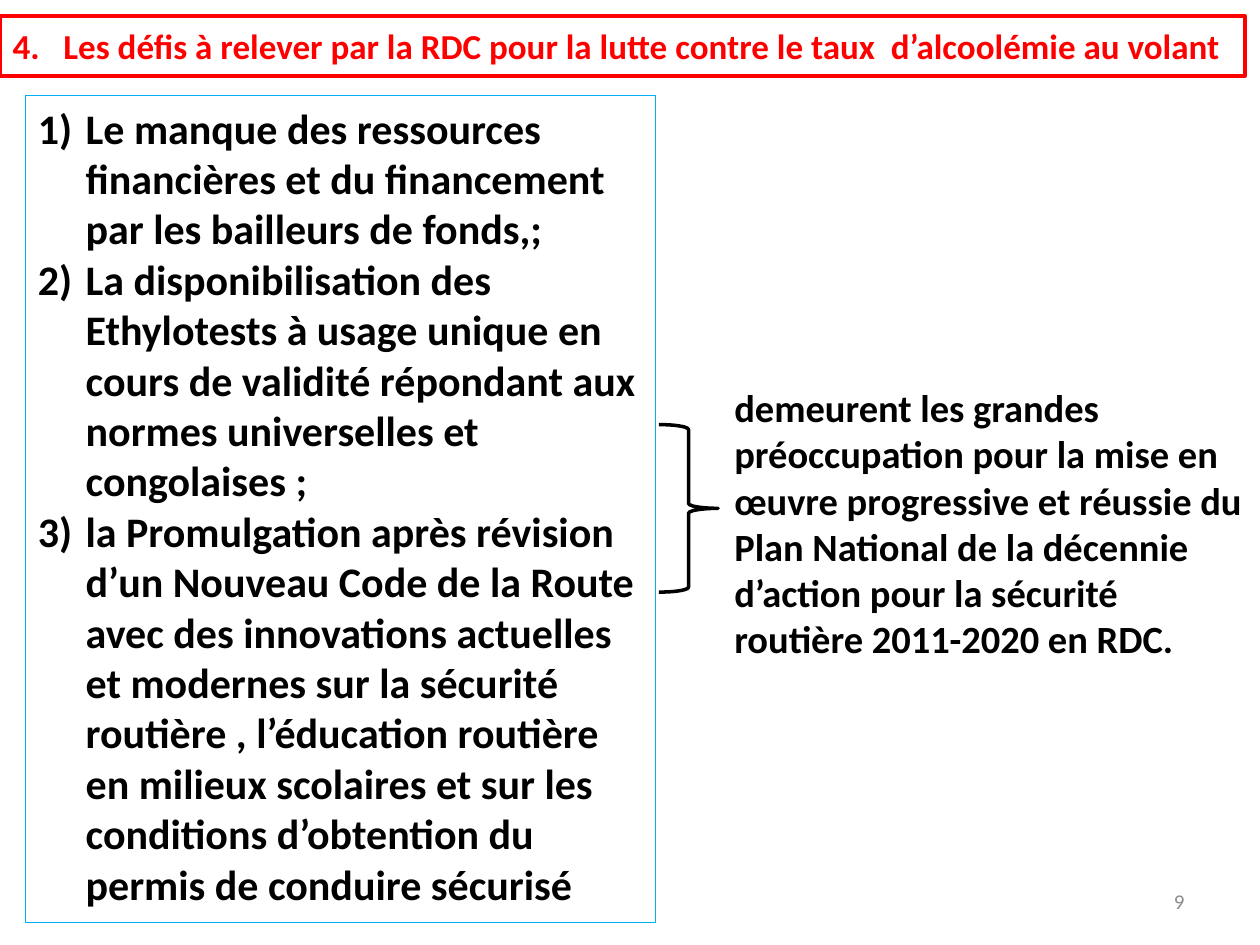
"""Build the slide on the challenges of drink-driving control in the DRC."""
from lxml import etree
from pptx import Presentation
from pptx import util as u
from pptx.dml.color import RGBColor
from pptx.enum import shapes, text

HUES = {"red": "FF0000", "blue": "00B0F0", "black": "000000", "grey": "8C8C8C"}
TITLE = "4.   Les défis à relever par la RDC pour la lutte contre le taux  d’alcoolémie au volant"
ITEMS = [
    "Le manque des ressources financières et du financement par les bailleurs de fonds,;",
    "La disponibilisation des Ethylotests à usage unique en  cours de validité "
    "répondant aux normes universelles et congolaises ;",
    "la Promulgation après révision d’un Nouveau Code de la Route avec des innovations "
    "actuelles et modernes sur la sécurité routière , l’éducation routière en milieux "
    "scolaires et sur les conditions d’obtention du permis de conduire sécurisé",
]
RESULT = (
    "demeurent les grandes préoccupation pour la mise en œuvre progressive et réussie du "
    "Plan National de la décennie  d’action pour la sécurité routière 2011-2020 en RDC."
)
PAGE = "9"
SPOTS = {
    "title": (0, 0.13, 9.88, 0.47),
    "list": (0.2, 0.76, 5, 6.56),
    "result": (5.73, 3, 4.33, 2.32),
    "brace": (5.23, 3.37, 0.47, 1.33),
    "page": (7.17, 6.95, 2.33, 0.4),
}
ALIGN = text.PP_ALIGN


def tint(name):
    return RGBColor.from_string(HUES[name])


def place(shape, spot):
    shape.left, shape.top, shape.width, shape.height = map(u.Inches, SPOTS[spot])


def edge(shape, hue, width):
    shape.line.color.rgb = tint(hue)
    shape.line.width = u.Pt(width)


def write(shape, lines, size, hue, bold=True, align=ALIGN.LEFT, anchor=text.MSO_ANCHOR.TOP):
    frame = shape.text_frame
    frame.word_wrap = True
    frame.auto_size = text.MSO_AUTO_SIZE.NONE
    frame.vertical_anchor = anchor
    for num, line in enumerate(lines):
        para = frame.add_paragraph() if num else frame.paragraphs[0]
        para.alignment = align
        para.space_before = u.Pt(0)
        run = para.add_run()
        run.text = line
        font = run.font
        font.name, font.size, font.bold = "Calibri", u.Pt(size), bold
        font.color.rgb = tint(hue)
    return frame.paragraphs


def number(para):
    props = para._p.get_or_add_pPr()
    props.set("marL", str(u.Inches(0.38)))
    props.set("indent", str(-u.Inches(0.38)))
    space = props.nsmap["a"]
    etree.SubElement(props, f"{{{space}}}buFont", typeface="+mj-lt")
    etree.SubElement(props, f"{{{space}}}buAutoNum", type="arabicParenR")


def main():
    deck = Presentation()
    deck.slide_width, deck.slide_height = u.Inches(10), u.Inches(7.5)
    slide = deck.slides.add_slide(deck.slide_layouts[1])
    middle = text.MSO_ANCHOR.MIDDLE

    title = slide.shapes.title
    place(title, "title")
    edge(title, "red", 2.25)
    write(title, [TITLE], 20, "red", anchor=middle)

    body = slide.placeholders[1]
    place(body, "list")
    edge(body, "blue", 0.75)
    for para in write(body, ITEMS, 24, "black"):
        number(para)

    result = slide.shapes.add_textbox(0, 0, 0, 0)
    place(result, "result")
    write(result, [RESULT], 22, "black")

    brace = slide.shapes.add_shape(shapes.MSO_SHAPE.RIGHT_BRACE, 0, 0, 0, 0)
    place(brace, "brace")
    brace.shadow.inherit = False
    brace.fill.background()
    edge(brace, "black", 2)

    page = slide.shapes.add_textbox(0, 0, 0, 0)
    place(page, "page")
    write(page, [PAGE], 12, "grey", False, ALIGN.RIGHT, middle)

    deck.save("out.pptx")


if __name__ == "__main__":
    main()
